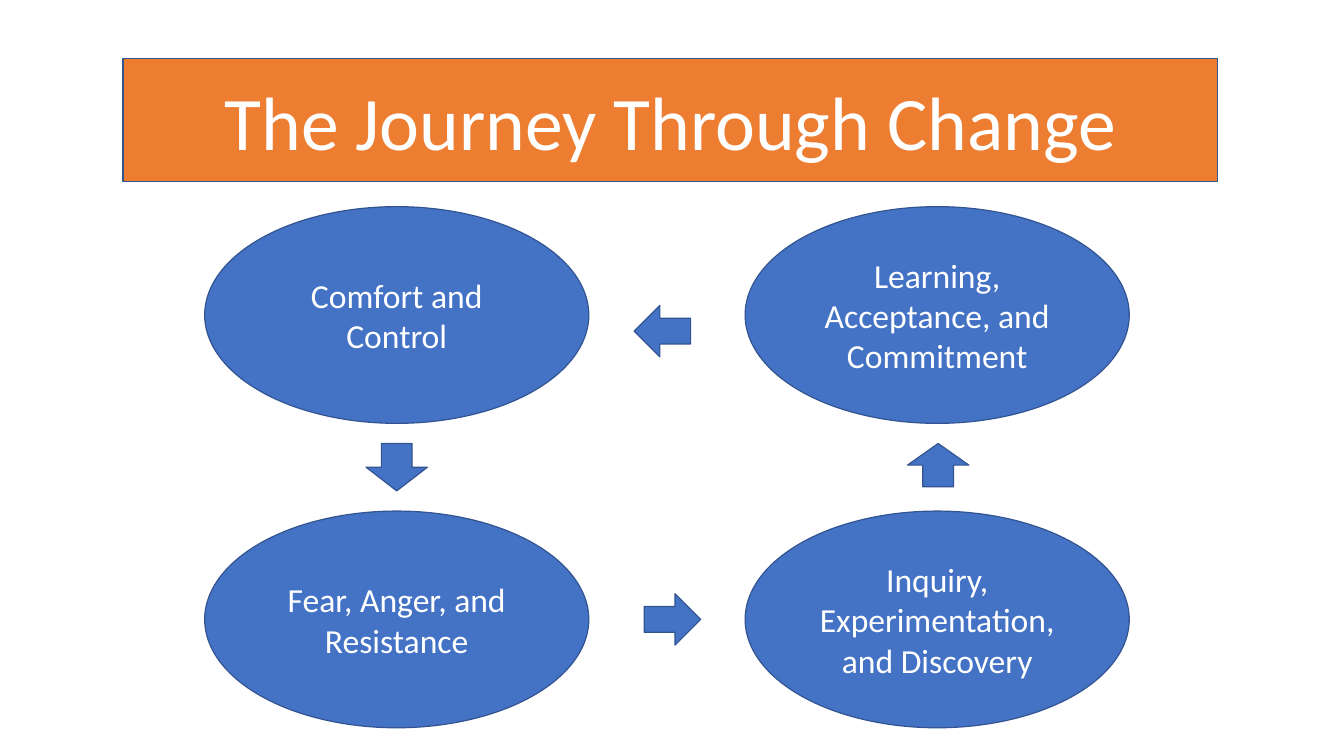
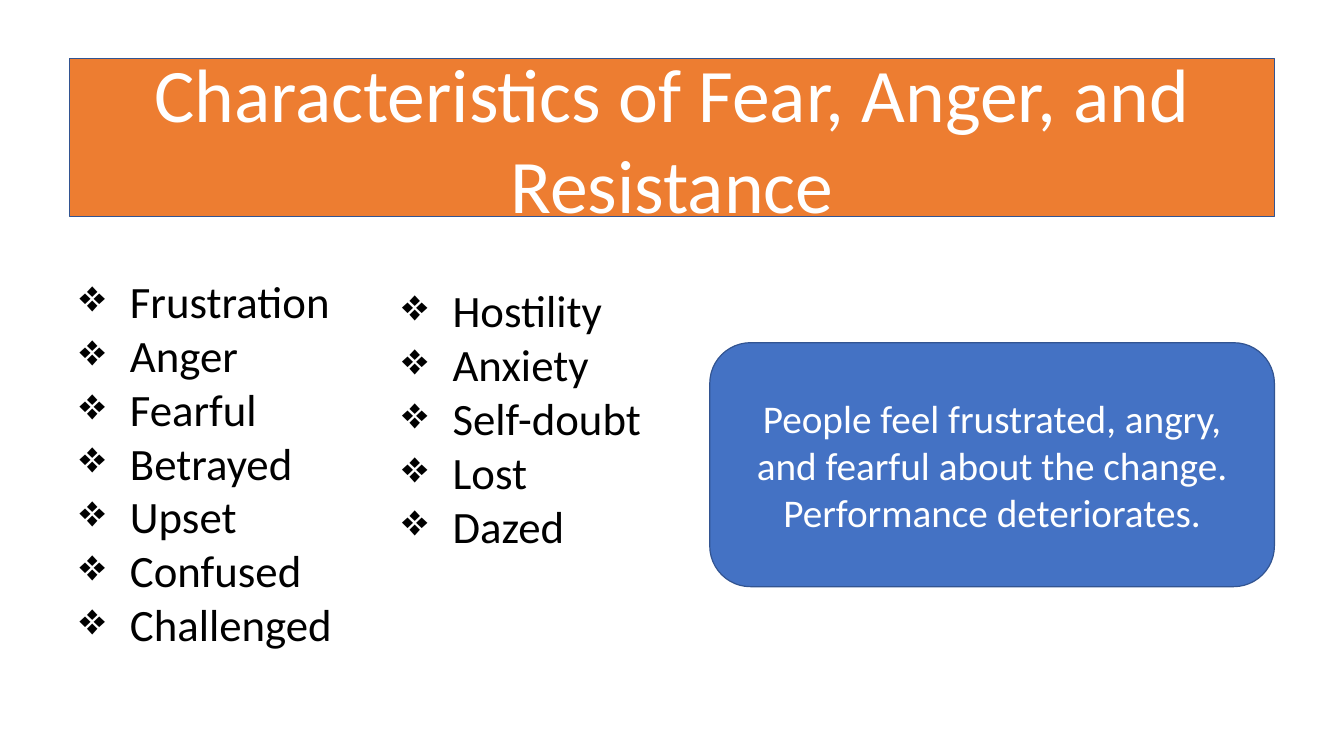
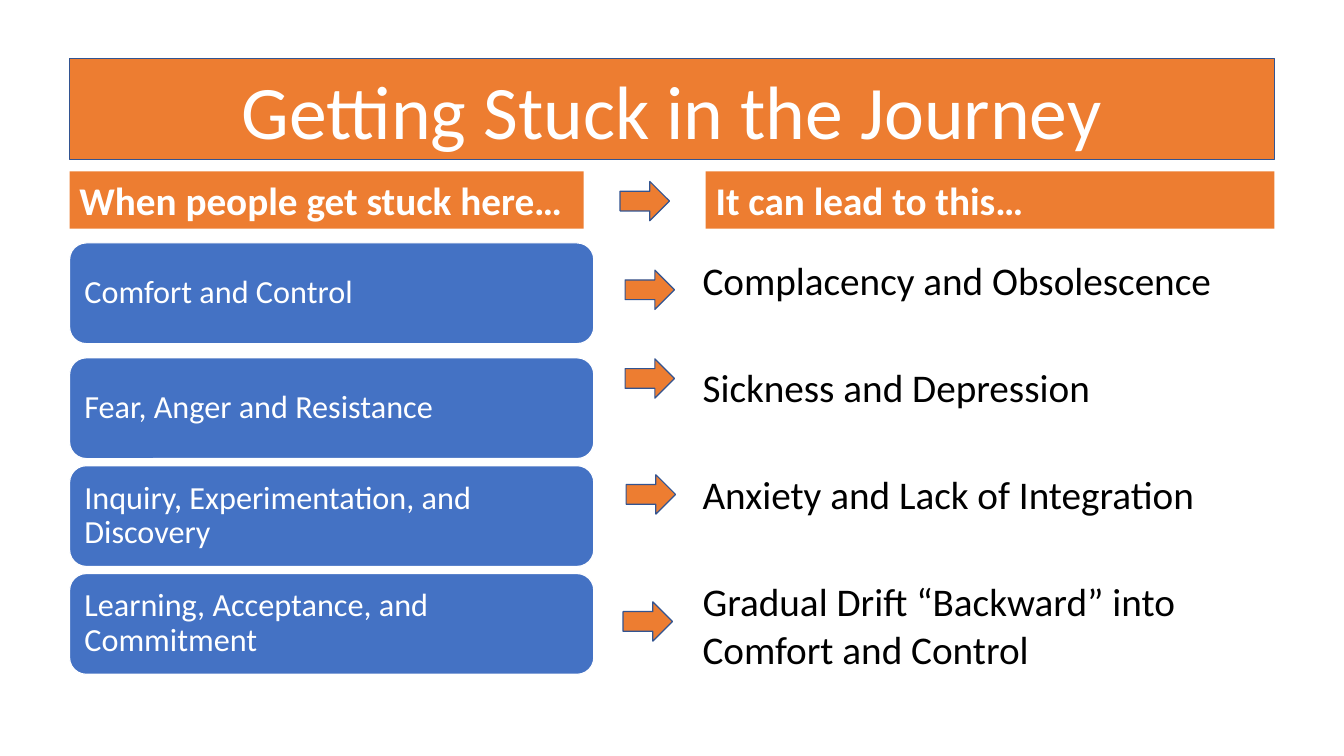
from dataclasses import dataclass

from lxml.etree import SubElement
from pptx import Presentation
from pptx.dml.color import RGBColor
from pptx.enum.shapes import MSO_SHAPE
from pptx.enum.text import MSO_ANCHOR, PP_ALIGN
from pptx.oxml.ns import qn
from pptx.util import Inches, Pt


@dataclass(frozen=True)
class Theme:
    font: str = "Calibri"
    orange: str = "ED7D31"
    blue: str = "4472C4"
    edge: str = "325491"
    white: str = "FFFFFF"
    black: str = "000000"
    rule: float = 0.85
    title: int = 54
    list: int = 32
    body: int = 28
    stage: int = 24
    card: int = 23


theme = Theme()


def draw(slide, kind, box, fill, line=theme.edge):
    shape = slide.shapes.add_shape(kind, *map(Inches, box))
    shape.shadow.inherit = False
    shape.fill.solid()
    shape.fill.fore_color.rgb = RGBColor.from_string(fill)
    if line:
        shape.line.color.rgb = RGBColor.from_string(line)
        shape.line.width = Pt(theme.rule)
    else:
        shape.line.fill.background()
    return shape


def write(shape, text, size=theme.body, color=theme.white, bold=False,
          align=PP_ALIGN.CENTER, anchor=MSO_ANCHOR.MIDDLE,
          inset=0.1, gap=0, lead=None, bullet=None):
    """Fill a shape with one paragraph per line of text."""
    frame = shape.text_frame
    frame.word_wrap = True
    frame.vertical_anchor = anchor
    frame.margin_left = frame.margin_right = Inches(inset)
    for i, line in enumerate(text.split("\n")):
        para = frame.add_paragraph() if i else frame.paragraphs[0]
        para.alignment = align
        if lead:
            para.line_spacing = lead
        if i and gap:
            para.space_before = Pt(gap)
        if bullet:
            props = para._p.get_or_add_pPr()
            props.set("marL", str(Inches(0.5)))
            props.set("indent", str(Inches(-0.5)))
            SubElement(props, qn("a:buChar")).set("char", bullet)
        run = para.add_run()
        run.text = line
        run.font.name = theme.font
        run.font.size = Pt(size)
        run.font.bold = bold
        run.font.color.rgb = RGBColor.from_string(color)


deck = Presentation()
deck.slide_width = Inches(13.33)
deck.slide_height = Inches(7.5)

# Every slide opens with an orange title band
bands = [
    ("The Journey Through Change", 1.22, 10.86, 1.22),
    ("Characteristics of Fear, Anger, and Resistance", 0.69, 11.95, 1.57),
    ("Getting Stuck in the Journey", 0.69, 11.95, 1),
]
slides = []
for title, left, width, height in bands:
    slide = deck.slides.add_slide(deck.slide_layouts[6])
    band = draw(slide, MSO_SHAPE.RECTANGLE, (left, 0.58, width, height),
                theme.orange)
    write(band, title, size=theme.title)
    slides.append(slide)
journey, traits, stuck = slides

# Journey: four stages in a cycle
stages = [
    ("Comfort and Control", 0, 0),
    ("Fear, Anger, and Resistance", 0, 1),
    ("Inquiry, Experimentation, and Discovery", 1, 1),
    ("Learning, Acceptance, and Commitment", 1, 0),
]
for text, col, row in stages:
    box = (2.03 + 5.36 * col, 2.05 + 3.02 * row, 3.81, 2.15)
    write(draw(journey, MSO_SHAPE.OVAL, box, theme.blue), text,
          size=theme.stage)

turns = [
    (MSO_SHAPE.DOWN_ARROW, (3.63, 4.4, 0.61, 0.47)),
    (MSO_SHAPE.RIGHT_ARROW, (6.39, 5.89, 0.56, 0.51)),
    (MSO_SHAPE.UP_ARROW, (9, 4.4, 0.61, 0.43)),
    (MSO_SHAPE.LEFT_ARROW, (6.29, 3.03, 0.56, 0.51)),
]
for kind, box in turns:
    draw(journey, kind, box, theme.blue)

# Traits: two bullet lists and a summary
lists = [
    ((0.69, 2.67, 5.39, 3.87),
     "Frustration\nAnger\nFearful\nBetrayed\nUpset\nConfused\nChallenged"),
    ((3.89, 2.76, 3.15, 2.79),
     "Hostility\nAnxiety\nSelf-doubt\nLost\nDazed"),
]
for box, text in lists:
    write(traits.shapes.add_textbox(*map(Inches, box)), text,
          size=theme.list, color=theme.black, align=PP_ALIGN.LEFT,
          anchor=MSO_ANCHOR.TOP, bullet="❖")

note = draw(traits, MSO_SHAPE.ROUNDED_RECTANGLE, (7.04, 3.4, 5.6, 2.42),
            theme.blue)
write(note, "People feel frustrated, angry, and fearful about the change. "
            "Performance deteriorates.")

# Stuck: each stage points to its outcome
heads = [
    ("When people get stuck here…", 0.69, 5.1),
    ("It can lead to this…", 7, 5.64),
]
for text, left, width in heads:
    head = draw(stuck, MSO_SHAPE.RECTANGLE, (left, 1.7, width, 0.57),
                theme.orange, line=None)
    write(head, text, bold=True, align=PP_ALIGN.LEFT, anchor=MSO_ANCHOR.TOP)

cards = [
    ("Comfort and Control", 2.41),
    ("Fear, Anger and Resistance", 3.55),
    ("Inquiry, Experimentation, and Discovery", 4.62),
    ("Learning, Acceptance, and Commitment", 5.69),
]
for text, top in cards:
    card = draw(stuck, MSO_SHAPE.ROUNDED_RECTANGLE, (0.69, top, 5.2, 1),
                theme.blue, line=theme.white)
    write(card, text, size=theme.card, align=PP_ALIGN.LEFT, inset=0.1,
          lead=0.9)

spots = [(6.15, 1.8), (6.2, 2.68), (6.2, 3.56), (6.21, 4.71), (6.18, 5.97)]
for left, top in spots:
    draw(stuck, MSO_SHAPE.RIGHT_ARROW, (left, top, 0.49, 0.39), theme.orange)

ends = stuck.shapes.add_textbox(*map(Inches, (6.87, 2.49, 5.77, 4.27)))
write(ends, "Complacency and Obsolescence\n"
            "Sickness and Depression\n"
            "Anxiety and Lack of Integration\n"
            "Gradual Drift “Backward” into Comfort and Control",
      color=theme.black, align=PP_ALIGN.LEFT, anchor=MSO_ANCHOR.TOP, gap=43)

deck.save("out.pptx")
